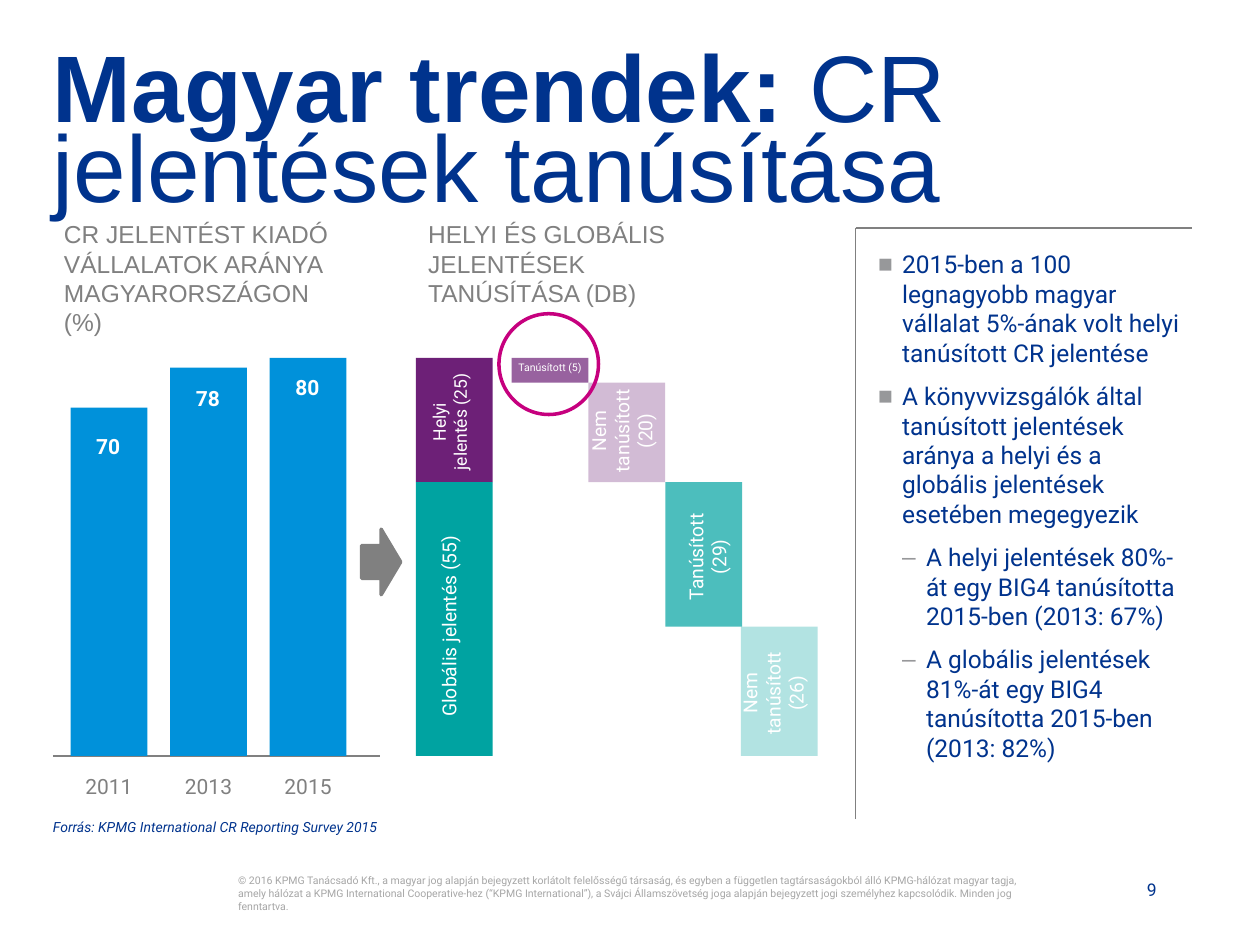
"""Build the slide on the assurance of CR reports in Hungary."""
from dataclasses import dataclass
from typing import Optional

from lxml.etree import SubElement
from pptx import Presentation
from pptx.dml.color import RGBColor
from pptx.enum.shapes import MSO_CONNECTOR, MSO_SHAPE
from pptx.enum.text import MSO_ANCHOR, MSO_AUTO_SIZE, PP_ALIGN
from pptx.oxml.ns import qn
from pptx.util import Inches, Pt

NAVY = RGBColor(0x00, 0x33, 0x8D)
BLUE = RGBColor(0x00, 0x91, 0xDA)
PURPLE = RGBColor(0x6D, 0x20, 0x77)
TEAL = RGBColor(0x00, 0xA3, 0xA1)
MAGENTA = RGBColor(0xC6, 0x00, 0x7E)
GRAY = RGBColor(0x80, 0x80, 0x80)
LIGHT_GRAY = RGBColor(0xA6, 0xA6, 0xA6)
WHITE = RGBColor(0xFF, 0xFF, 0xFF)
BULLET_GRAY = "97989A"

BASELINE = 6.0
UNIT = 0.0395
BAR_WIDTH = 0.61
YEAR_LEFT, YEAR_STEP = 0.56, 0.79
DEFAULT_INSETS = (0.1, 0.05, 0.1, 0.05)
NO_INSETS = (0, 0, 0, 0)


@dataclass(frozen=True)
class Box:
    left: float
    top: float
    width: float
    height: float

    def lengths(self) -> tuple:
        return tuple(map(Inches, (self.left, self.top, self.width, self.height)))


@dataclass(frozen=True)
class Style:
    size: float
    color: RGBColor
    name: str = "Roboto"
    bold: bool = False
    italic: bool = False
    align: PP_ALIGN = PP_ALIGN.LEFT


@dataclass(frozen=True)
class YearBar:
    year: str
    value: int
    label_top: float


@dataclass(frozen=True)
class ReportBar:
    text: str
    left: float
    value: int
    base: int
    color: RGBColor
    opacity: int
    label: Box
    size: float = 11
    vertical: bool = True


@dataclass(frozen=True)
class Bullet:
    text: str
    symbol: str
    indent: float


YEAR_BARS = (
    YearBar("2011", 70, 3.39),
    YearBar("2013", 78, 3.01),
    YearBar("2015", 80, 2.92),
)
REPORT_BARS = (
    ReportBar("Helyi jelentés (25)", 3.3, 25, 55, PURPLE, 100, Box(3.35, 2.85, 0.54, 1), 10),
    ReportBar("Globális jelentés (55)", 3.3, 55, 0, TEAL, 100, Box(3.42, 3.93, 0.39, 2.08)),
    ReportBar("Tanúsított (29)", 5.28, 29, 26, TEAL, 70, Box(5.38, 3.85, 0.39, 1.14)),
    ReportBar("Nem tanúsított (26)", 5.88, 26, 0, TEAL, 30, Box(5.81, 4.99, 0.76, 1.02)),
    ReportBar("Tanúsított (5)", 4.06, 5, 75, PURPLE, 70, Box(4.01, 2.82, 0.71, 0.3), 6, False),
    ReportBar("Nem tanúsított (20)", 4.67, 20, 55, PURPLE, 30, Box(4.61, 2.91, 0.76, 1.02)),
)
BULLETS = (
    Bullet("2015-ben a 100 legnagyobb magyar vállalat 5%-ának volt helyi tanúsított CR jelentése", "■", 0.19),
    Bullet("A könyvvizsgálók által tanúsított jelentések aránya a helyi és a globális jelentések "
           "esetében megegyezik", "■", 0.19),
    Bullet("A helyi jelentések 80%-át egy BIG4 tanúsította 2015-ben (2013: 67%)", "–", 0.38),
    Bullet("A globális jelentések 81%-át egy BIG4 tanúsította 2015-ben (2013: 82%)", "–", 0.38),
)
COPYRIGHT = (
    "© 2016 KPMG Tanácsadó Kft., a magyar jog alapján bejegyzett korlátolt felelősségű társaság, "
    "és egyben a független tagtársaságokból álló KPMG-hálózat magyar tagja, amely hálózat a KPMG "
    "International Cooperative-hez (“KPMG International”), a Svájci Államszövetség joga alapján "
    "bejegyzett jogi személyhez kapcsolódik. Minden jog fenntartva."
)


def format_paragraph(paragraph, style: Style) -> None:
    paragraph.alignment = style.align
    font = paragraph.font
    font.name, font.size = style.name, Pt(style.size)
    font.bold, font.italic = style.bold, style.italic
    font.color.rgb = style.color


def set_frame(frame, insets: tuple) -> None:
    frame.word_wrap = True
    frame.auto_size = MSO_AUTO_SIZE.NONE
    frame.vertical_anchor = MSO_ANCHOR.TOP
    frame.margin_left, frame.margin_top, frame.margin_right, frame.margin_bottom = map(Inches, insets)


def add_text(slide, box: Box, text: str, style: Style, insets: tuple = DEFAULT_INSETS):
    frame = slide.shapes.add_textbox(*box.lengths()).text_frame
    set_frame(frame, insets)
    frame.text = text
    format_paragraph(frame.paragraphs[0], style)
    return frame


def add_shape(slide, kind: MSO_SHAPE, box: Box, fill: Optional[RGBColor] = None,
              line: Optional[RGBColor] = None, opacity: int = 100) -> None:
    shape = slide.shapes.add_shape(kind, *box.lengths())
    shape.shadow.inherit = False
    if fill is None:
        shape.fill.background()
    else:
        shape.fill.solid()
        shape.fill.fore_color.rgb = fill
    if opacity < 100:
        color = shape.fill._xPr.find(qn("a:solidFill"))[0]
        SubElement(color, qn("a:alpha"), val=str(opacity * 1000))
    if line is None:
        shape.line.fill.background()
    else:
        shape.line.color.rgb = line
        shape.line.width = Pt(2)


def add_bar(slide, left: float, value: int, base: int, color: RGBColor, opacity: int = 100) -> None:
    box = Box(left, BASELINE - (base + value) * UNIT, BAR_WIDTH, value * UNIT)
    add_shape(slide, MSO_SHAPE.RECTANGLE, box, color, opacity=opacity)


def add_line(slide, start: tuple, end: tuple, width: float) -> None:
    connector = slide.shapes.add_connector(MSO_CONNECTOR.STRAIGHT, *map(Inches, start + end))
    connector.line.color.rgb = GRAY
    connector.line.width = Pt(width)
    SubElement(connector._element.spPr, qn("a:effectLst"))


def add_title(slide) -> None:
    title = slide.shapes.title
    title.left, title.top, title.width, title.height = Box(0.42, 0.47, 8.77, 0.57).lengths()
    set_frame(title.text_frame, NO_INSETS)
    paragraph = title.text_frame.paragraphs[0]
    paragraph.line_spacing = 0.7
    format_paragraph(paragraph, Style(54, NAVY, "Arial"))
    for text, bold in (("Magyar trendek: ", True), ("CR jelentések tanúsítása", False)):
        run = paragraph.add_run()
        run.text, run.font.bold = text, bold


def add_year_chart(slide) -> None:
    add_line(slide, (0.42, BASELINE), (3.02, BASELINE), 0.75)
    for index, bar in enumerate(YEAR_BARS):
        left = YEAR_LEFT + index * YEAR_STEP
        add_bar(slide, left, bar.value, 0, BLUE)
        add_text(slide, Box(left, 6.09, BAR_WIDTH, 0.3), bar.year, Style(12, GRAY, align=PP_ALIGN.CENTER))
        add_text(slide, Box(left + 0.05, bar.label_top, 0.5, 0.3), str(bar.value),
                 Style(12, WHITE, bold=True, align=PP_ALIGN.CENTER))


def add_report_chart(slide) -> None:
    for bar in REPORT_BARS:
        add_bar(slide, bar.left, bar.value, bar.base, bar.color, bar.opacity)
        frame = add_text(slide, bar.label, bar.text, Style(bar.size, WHITE, align=PP_ALIGN.CENTER))
        if bar.vertical:
            frame._txBody.bodyPr.set("vert", "vert270")
    add_shape(slide, MSO_SHAPE.OVAL, Box(3.96, 2.49, 0.79, 0.8), line=MAGENTA)


def add_bullets(slide) -> None:
    frame = slide.shapes.add_textbox(*Box(6.89, 1.88, 2.57, 4.62).lengths()).text_frame
    set_frame(frame, (0.08, 0.1, 0.1, 0.1))
    for index, bullet in enumerate(BULLETS):
        paragraph = frame.add_paragraph() if index else frame.paragraphs[0]
        paragraph.text = bullet.text
        properties = paragraph._p.get_or_add_pPr()
        properties.set("marL", str(Inches(bullet.indent)))
        properties.set("indent", str(Inches(-0.19)))
        SubElement(SubElement(properties, qn("a:buClr")), qn("a:srgbClr"), val=BULLET_GRAY)
        SubElement(properties, qn("a:buFont"), typeface="Arial")
        SubElement(properties, qn("a:buChar"), char=bullet.symbol)
        paragraph.space_before = Pt(8 if index else 0)
        format_paragraph(paragraph, Style(14, NAVY))


def main() -> None:
    presentation = Presentation()
    presentation.slide_width, presentation.slide_height = Inches(10), Inches(7.5)
    slide = presentation.slides.add_slide(presentation.slide_layouts[5])
    add_title(slide)
    heading = Style(14, GRAY, "Arial")
    add_text(slide, Box(0.41, 1.69, 2.43, 0.81), "CR JELENTÉST KIADÓ VÁLLALATOK ARÁNYA MAGYARORSZÁGON (%)", heading)
    add_text(slide, Box(3.3, 1.69, 2.43, 0.81), "HELYI ÉS GLOBÁLIS JELENTÉSEK TANÚSÍTÁSA (DB)", heading)
    add_year_chart(slide)
    add_shape(slide, MSO_SHAPE.RIGHT_ARROW, Box(2.87, 4.2, 0.31, 0.52), GRAY, GRAY)
    add_report_chart(slide)
    add_line(slide, (6.79, 1.81), (9.46, 1.81), 1)
    add_line(slide, (6.79, 6.5), (6.79, 1.81), 1)
    add_bullets(slide)
    add_text(slide, Box(0.42, 6.5, 4.45, 0.13), "Forrás: KPMG International CR Reporting Survey 2015",
             Style(8, NAVY, italic=True), NO_INSETS)
    add_text(slide, Box(1.89, 6.94, 6.36, 0.28), COPYRIGHT, Style(6, LIGHT_GRAY), NO_INSETS)
    number = add_text(slide, Box(7.87, 6.98, 1.31, 0.16), "9", Style(10, NAVY, align=PP_ALIGN.RIGHT), NO_INSETS)
    number.vertical_anchor = MSO_ANCHOR.BOTTOM
    presentation.save("out.pptx")


if __name__ == "__main__":
    main()
